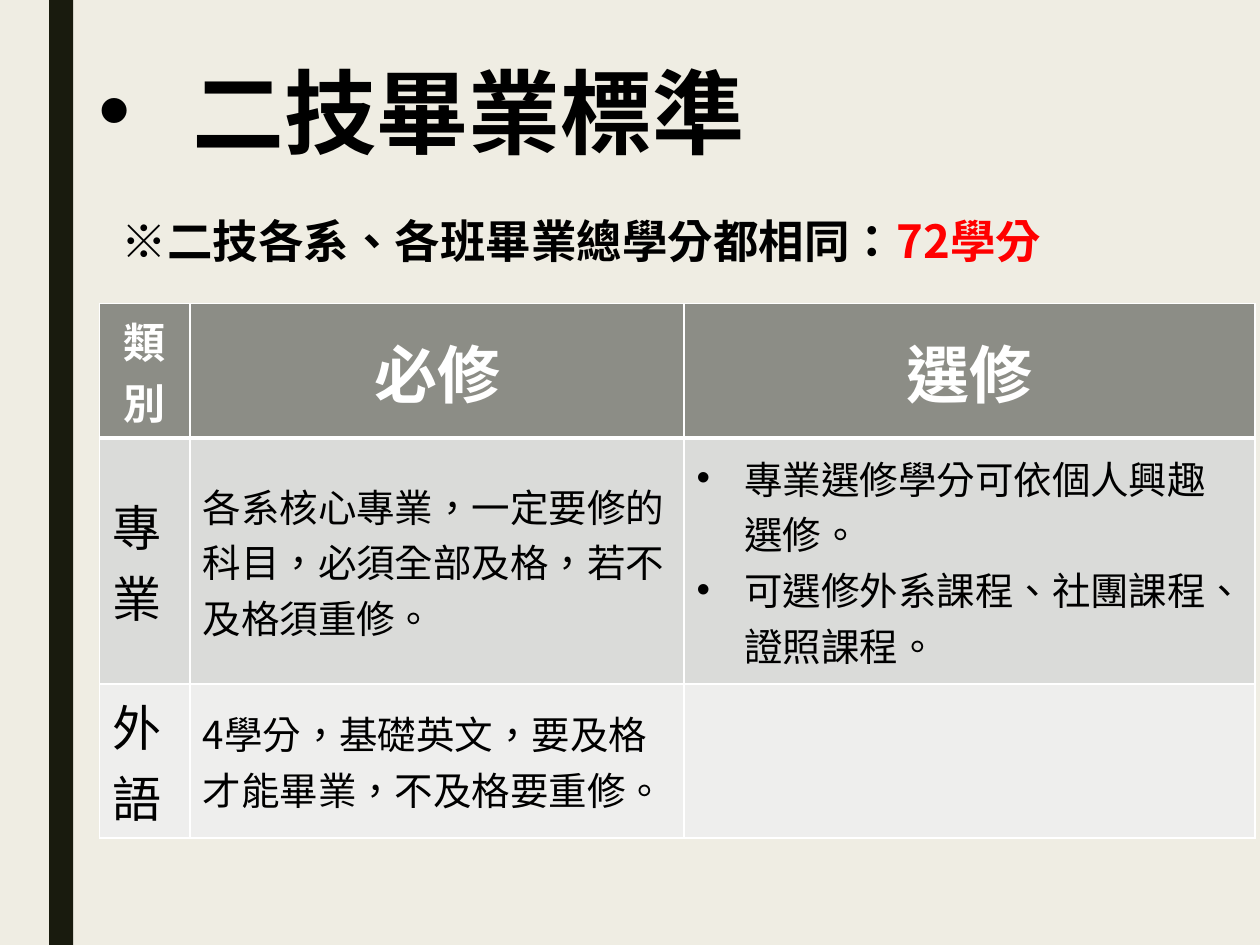
import dataclasses
import typing

import lxml.etree
import pptx
import pptx.dml.color
import pptx.enum.shapes
import pptx.enum.text
import pptx.oxml.ns
import pptx.util

Inches = pptx.util.Inches
Pt = pptx.util.Pt
Align = pptx.enum.text.PP_ALIGN
Anchor = pptx.enum.text.MSO_ANCHOR
AutoSize = pptx.enum.text.MSO_AUTO_SIZE
qn = pptx.oxml.ns.qn

FONT = "Noto Sans CJK SC"
BLACK, WHITE, RED = "000000", "FFFFFF", "FF0000"
COLUMN_WIDTHS = (0.72, 3.92, 4.53)
ROW_HEIGHTS = (1, 1.95, 1.15)
ROW_FILLS = ("8C8D86", "DADBD9", "EEEEED")


@dataclasses.dataclass(frozen=True)
class Style:
    size: float
    color: str = BLACK
    bold: bool = False


@dataclasses.dataclass(frozen=True)
class CellContent:
    text: str
    style: Style
    align: typing.Optional[Align] = None
    bullet_indent: float = 0


def header(text: str, size: float) -> CellContent:
    return CellContent(text, Style(size, WHITE, True), Align.CENTER)


CATEGORY = Style(28)
BODY = Style(22)
ROWS = (
    (header("類別", 24), header("必修", 36), header("選修", 36)),
    (
        CellContent("專業", CATEGORY),
        CellContent("各系核心專業，一定要修的科目，必須全部及格，若不及格須重修。", BODY),
        CellContent(
            "專業選修學分可依個人興趣選修。\n可選修外系課程、社團課程、證照課程。",
            BODY,
            bullet_indent=0.38,
        ),
    ),
    (
        CellContent("外語", CATEGORY),
        CellContent("4學分，基礎英文，要及格才能畢業，不及格要重修。", BODY),
        CellContent("", BODY),
    ),
)


def set_color(target, color: str) -> None:
    target.rgb = pptx.dml.color.RGBColor.from_string(color)


def set_fill(fill, color: str) -> None:
    fill.solid()
    set_color(fill.fore_color, color)


def format_span(span, style: Style) -> None:
    span.font.size = Pt(style.size)
    span.font.bold = style.bold
    span.font.name = FONT
    set_color(span.font.color, style.color)
    properties = span._r.get_or_add_rPr()
    properties.set("lang", "zh-TW")
    lxml.etree.SubElement(properties, qn("a:ea")).set("typeface", FONT)


def add_bullet(para, indent: float) -> None:
    properties = para._p.get_or_add_pPr()
    properties.set("marL", str(Inches(indent)))
    properties.set("indent", str(-Inches(indent)))
    lxml.etree.SubElement(properties, qn("a:buFont")).set("typeface", "Arial")
    lxml.etree.SubElement(properties, qn("a:buChar")).set("char", "•")


def set_borders(cell, bottom_width: float) -> None:
    properties = cell._tc.get_or_add_tcPr()
    widths = {"a:lnL": 1, "a:lnR": 1, "a:lnT": 1, "a:lnB": bottom_width}
    for position, (tag, width) in enumerate(widths.items()):
        line = lxml.etree.Element(qn(tag), w=str(Pt(width)))
        solid = lxml.etree.SubElement(line, qn("a:solidFill"))
        lxml.etree.SubElement(solid, qn("a:srgbClr")).set("val", WHITE)
        properties.insert(position, line)


def add_side_bar(page) -> None:
    bar = page.shapes.add_shape(
        pptx.enum.shapes.MSO_SHAPE.RECTANGLE,
        Inches(0.39), Inches(0), Inches(0.19), Inches(7.5),
    )
    bar.shadow.inherit = False
    set_fill(bar.fill, "191B0E")
    bar.line.fill.background()


def format_title(page) -> None:
    title = page.shapes.title
    title.left, title.top = Inches(0.68), Inches(0.52)
    title.width, title.height = Inches(5.89), Inches(0.88)
    frame = title.text_frame
    frame.text = "二技畢業標準"
    frame.auto_size = AutoSize.NONE
    frame.vertical_anchor = Anchor.MIDDLE
    para = frame.paragraphs[0]
    para.alignment = Align.LEFT
    para.line_spacing = 0.79
    add_bullet(para, 0.75)
    format_span(para.runs[0], Style(52.6, BLACK, True))


def add_credit_note(page) -> None:
    box = page.shapes.add_textbox(Inches(0.68), Inches(1.64), Inches(7.87), Inches(0.54))
    frame = box.text_frame
    frame.word_wrap = True
    frame.auto_size = AutoSize.SHAPE_TO_FIT_TEXT
    para = frame.paragraphs[0]
    para.alignment = Align.CENTER
    for text, color in (("※二技各系、各班畢業總學分都相同：", BLACK), ("72學分", RED)):
        span = para.add_run()
        span.text = text
        format_span(span, Style(26, color, True))


def fill_cell(cell, content: CellContent) -> None:
    cell.vertical_anchor = Anchor.MIDDLE
    cell.text_frame.text = content.text
    for para in cell.text_frame.paragraphs:
        para.alignment = content.align
        if content.bullet_indent:
            add_bullet(para, content.bullet_indent)
        for span in para.runs:
            format_span(span, content.style)


def add_requirements_table(page) -> None:
    table = page.shapes.add_table(
        len(ROWS), len(COLUMN_WIDTHS), Inches(0.79), Inches(2.41),
        Inches(sum(COLUMN_WIDTHS)), Inches(sum(ROW_HEIGHTS)),
    ).table
    for column, width in zip(table.columns, COLUMN_WIDTHS):
        column.width = Inches(width)
    for row_index, contents in enumerate(ROWS):
        table.rows[row_index].height = Inches(ROW_HEIGHTS[row_index])
        for column_index, content in enumerate(contents):
            cell = table.cell(row_index, column_index)
            fill_cell(cell, content)
            set_fill(cell.fill, ROW_FILLS[row_index])
            set_borders(cell, 3 if row_index == 0 else 1)


def main() -> None:
    deck = pptx.Presentation()
    deck.slide_width, deck.slide_height = Inches(10), Inches(7.5)
    page = deck.slides.add_slide(deck.slide_layouts.get_by_name("Title Only"))
    set_fill(page.background.fill, "EFEDE3")
    add_side_bar(page)
    add_requirements_table(page)
    add_credit_note(page)
    format_title(page)
    deck.save("out.pptx")


if __name__ == "__main__":
    main()
